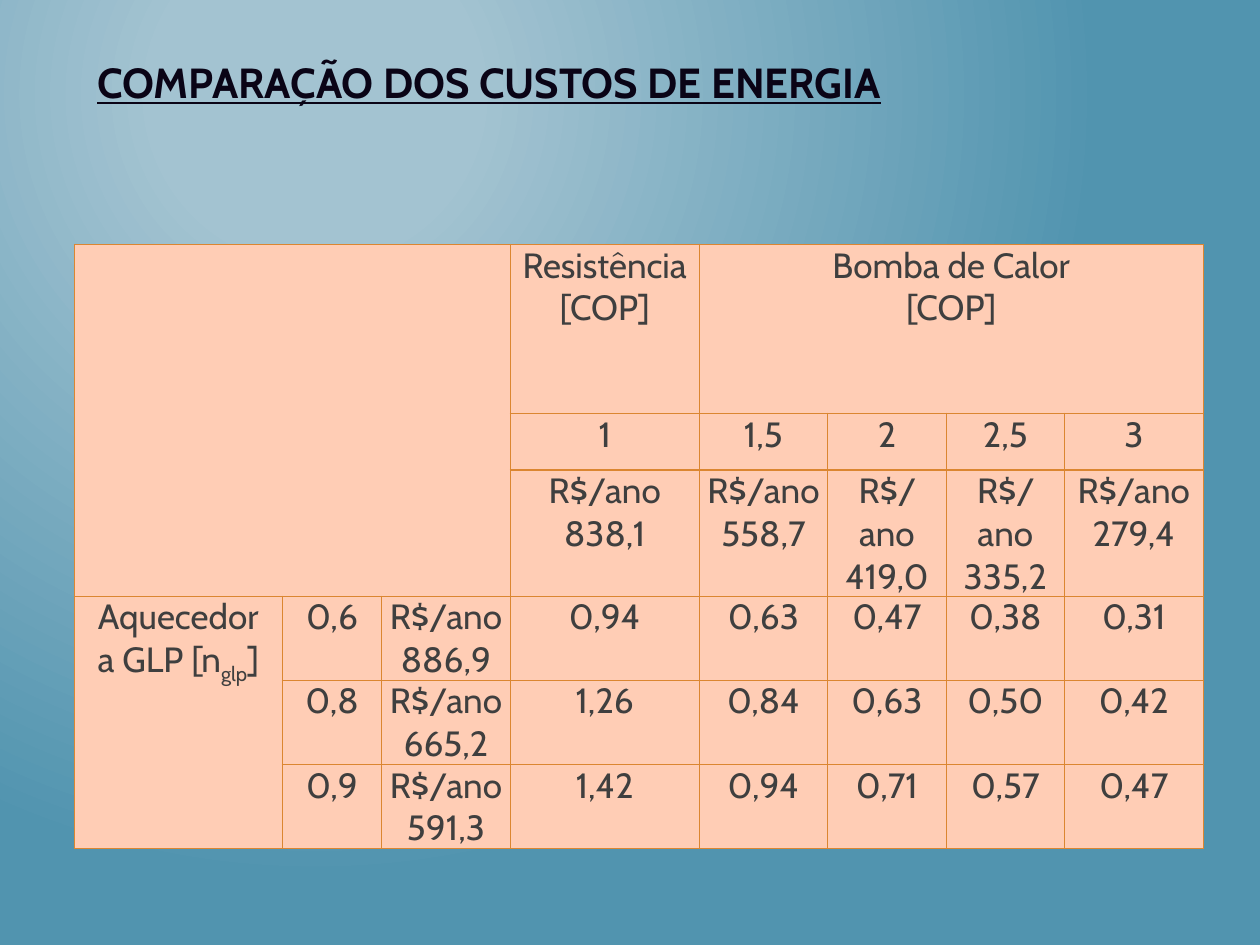
from dataclasses import dataclass

from lxml.etree import SubElement
from pptx import Presentation
from pptx.dml.color import RGBColor
from pptx.enum.text import MSO_ANCHOR, MSO_AUTO_SIZE, PP_ALIGN
from pptx.oxml.ns import qn
from pptx.util import Inches, Pt


@dataclass(frozen=True)
class Theme:
    font: str = "Cabin"
    glow: str = "A3C3D1"
    backdrop: str = "5194AF"
    heading: str = "0A0416"
    body: str = "3F3F3F"
    cell: str = "FFCDB5"
    border: str = "DB8631"
    heading_size: int = 24
    body_size: int = 20
    border_width: float = 0.75


THEME = Theme()
COLUMN_WIDTHS = [1.65, 0.79, 1.02, 1.5, 1.02, 0.94, 0.94, 1.1]
ROW_HEIGHTS = [1.34, 0.45, 0.66, 0.45, 0.45, 0.45]
MERGES = [((0, 0), (2, 2)), ((0, 4), (0, 7)), ((3, 0), (5, 0))]
COSTS = [
    ["", "", "", "Resistência\n[COP]", "Bomba de Calor\n[COP]", "", "", ""],
    ["", "", "", "1", "1,5", "2", "2,5", "3"],
    ["", "", "", "R$/ano 838,1", "R$/ano 558,7", "R$/ano 419,0", "R$/ano 335,2", "R$/ano 279,4"],
    ["Aquecedor\na GLP [n", "0,6", "R$/ano 886,9", "0,94", "0,63", "0,47", "0,38", "0,31"],
    ["", "0,8", "R$/ano 665,2", "1,26", "0,84", "0,63", "0,50", "0,42"],
    ["", "0,9", "R$/ano 591,3", "1,42", "0,94", "0,71", "0,57", "0,47"],
]


def style_font(font, size, color):
    font.name = THEME.font
    font.size = Pt(size)
    font.color.rgb = RGBColor.from_string(color)


def paint_background(slide):
    fill = slide.background.fill
    fill.gradient()
    colors = [(0.2, THEME.glow), (1, THEME.backdrop)]
    for stop, (position, color) in zip(fill.gradient_stops, colors):
        stop.position = position
        stop.color.rgb = RGBColor.from_string(color)
    linear = slide.element.find(".//" + qn("a:lin"))
    gradient = linear.getparent()
    gradient.remove(linear)
    circle = SubElement(gradient, qn("a:path"), path="circle")
    SubElement(circle, qn("a:fillToRect"), l="50000", t="20000", r="100000", b="100000")


def add_heading(slide, text):
    heading = slide.shapes.title
    heading.left, heading.top = Inches(0.67), Inches(0.4)
    heading.width, heading.height = Inches(8.9), Inches(0.5)
    frame = heading.text_frame
    frame.text = text
    frame.auto_size = MSO_AUTO_SIZE.SHAPE_TO_FIT_TEXT
    frame.vertical_anchor = MSO_ANCHOR.TOP
    paragraph = frame.paragraphs[0]
    paragraph.alignment = PP_ALIGN.LEFT
    font = paragraph.runs[0].font
    style_font(font, THEME.heading_size, THEME.heading)
    font.bold = font.underline = True


def draw_borders(cell):
    properties = cell._tc.get_or_add_tcPr()
    for position, side in enumerate(("a:lnL", "a:lnR", "a:lnT", "a:lnB")):
        line = SubElement(properties, qn(side), w=str(Pt(THEME.border_width)))
        fill = SubElement(line, qn("a:solidFill"))
        SubElement(fill, qn("a:srgbClr"), val=THEME.border)
        properties.insert(position, line)


def style_cell(cell):
    cell.margin_left = cell.margin_right = Inches(0.04)
    cell.margin_top = cell.margin_bottom = 0
    cell.fill.solid()
    cell.fill.fore_color.rgb = RGBColor.from_string(THEME.cell)
    draw_borders(cell)
    for paragraph in cell.text_frame.paragraphs:
        paragraph.alignment = PP_ALIGN.CENTER
        for run in paragraph.runs:
            style_font(run.font, THEME.body_size, THEME.body)


def add_efficiency_subscript(cell):
    paragraph = cell.text_frame.paragraphs[-1]
    subscript = paragraph.add_run()
    subscript.text = "glp"
    subscript.font._element.set("baseline", "-25000")
    paragraph.add_run().text = "]"


def add_cost_table(slide):
    table = slide.shapes.add_table(
        len(ROW_HEIGHTS), len(COLUMN_WIDTHS), Inches(0.59), Inches(1.94),
        Inches(sum(COLUMN_WIDTHS)), Inches(sum(ROW_HEIGHTS)),
    ).table
    table.first_row = table.horz_banding = False
    for column, width in zip(table.columns, COLUMN_WIDTHS):
        column.width = Inches(width)
    for row, height, texts in zip(table.rows, ROW_HEIGHTS, COSTS):
        row.height = Inches(height)
        for cell, text in zip(row.cells, texts):
            cell.text_frame.text = text
    add_efficiency_subscript(table.cell(3, 0))
    for cell in table.iter_cells():
        style_cell(cell)
    for first, last in MERGES:
        table.cell(*first).merge(table.cell(*last))


def main():
    deck = Presentation()
    deck.slide_width, deck.slide_height = Inches(10), Inches(7.5)
    slide = deck.slides.add_slide(deck.slide_layouts[5])
    paint_background(slide)
    add_heading(slide, "COMPARAÇÃO DOS CUSTOS DE ENERGIA")
    add_cost_table(slide)
    deck.save("out.pptx")


if __name__ == "__main__":
    main()
